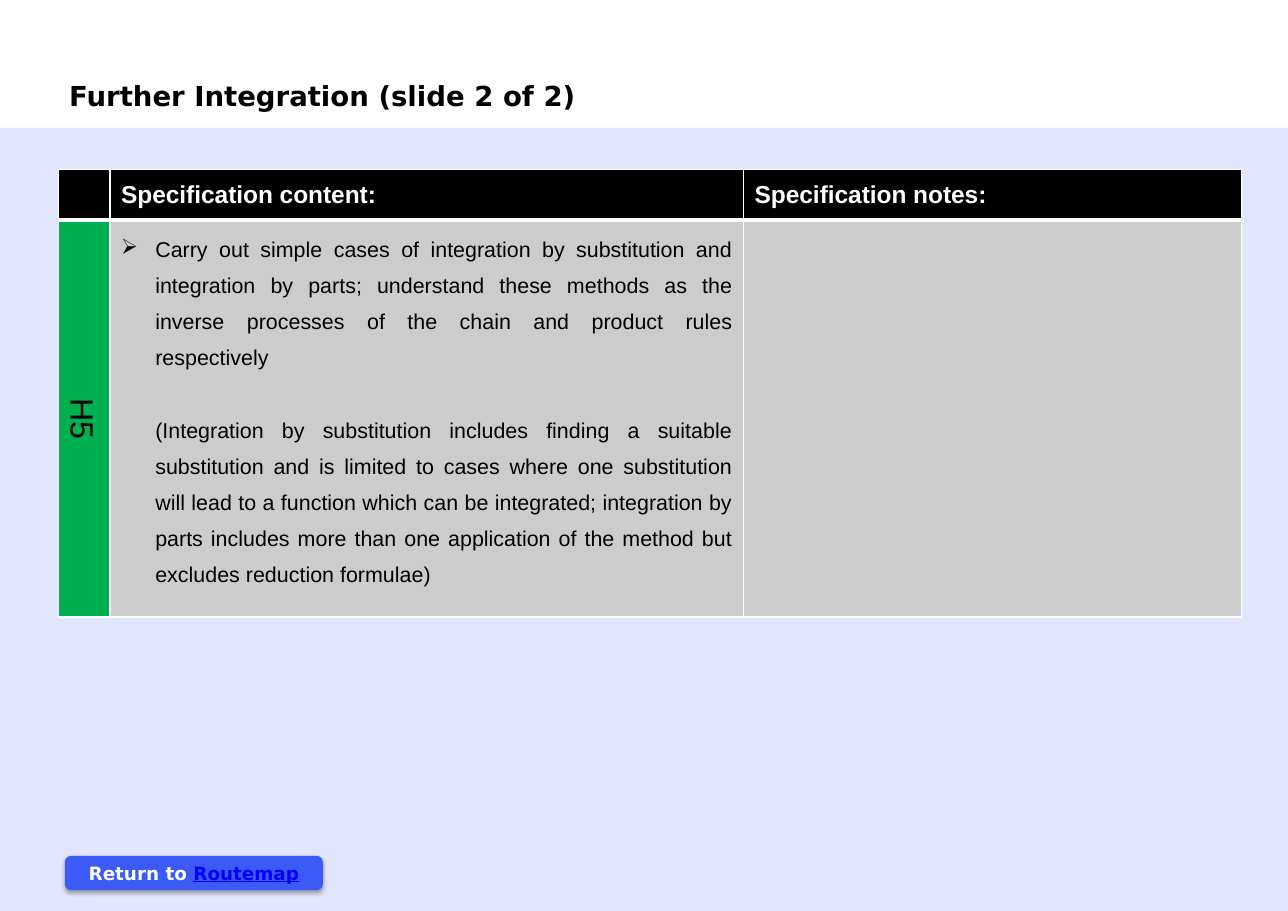
"""Build the Further Integration specification slide."""
from lxml.etree import SubElement
from pptx import Presentation
from pptx.dml.color import RGBColor
from pptx.enum.shapes import MSO_SHAPE
from pptx.enum.text import MSO_ANCHOR, MSO_AUTO_SIZE, PP_ALIGN
from pptx.oxml import parse_xml
from pptx.oxml.ns import nsdecls, qn
from pptx.util import Inches, Pt


def paint(fill, color):
    fill.solid()
    fill.fore_color.rgb = RGBColor.from_string(color)


def style(paragraph, name, size, color, bold):
    font = paragraph.font
    font.name, font.size, font.bold = name, Pt(size), bold
    paint(font.fill, color)


prs = Presentation()
prs.slide_width, prs.slide_height = Inches(11.69), Inches(8.27)
slide = prs.slides.add_slide(prs.slide_layouts[6])

backdrop = slide.shapes.add_shape(
    MSO_SHAPE.RECTANGLE, 0, Inches(1.16), Inches(11.69), Inches(7.11))
backdrop.shadow.inherit = False
backdrop.line.fill.background()
paint(backdrop.fill, "3B5AF7")
tint = backdrop.fill._xPr.find(qn("a:solidFill"))[0]
SubElement(tint, qn("a:alpha"), val="15000")

return_button = slide.shapes.add_shape(
    MSO_SHAPE.ROUNDED_RECTANGLE, Inches(0.59), Inches(7.77), Inches(2.34), Inches(0.31))
return_button.shadow.inherit = False
return_button.line.fill.background()
paint(return_button.fill, "3B5AF7")
return_button._element.spPr.find(qn("a:effectLst")).append(parse_xml(
    f'<a:outerShdw {nsdecls("a")} blurRad="{Pt(3.1)}" dist="{Pt(1.8)}" dir="5400000" '
    'rotWithShape="0"><a:srgbClr val="000000"><a:alpha val="35000"/></a:srgbClr></a:outerShdw>'))
return_button.text_frame.vertical_anchor = MSO_ANCHOR.MIDDLE
return_label = return_button.text_frame.paragraphs[0]
return_label.alignment = PP_ALIGN.CENTER
style(return_label, "DejaVu Sans", 12, "FFFFFF", True)
return_label.add_run().text = "Return to "
routemap = return_label.add_run()
routemap.text = "Routemap"
routemap.font.underline = True
paint(routemap.font.fill, "0000FF")

specification = slide.shapes.add_table(
    2, 3, Inches(0.53), Inches(1.54), Inches(10.74), Inches(4.06)).table
for column, width in zip(specification.columns, (0.47, 5.75, 4.52)):
    column.width = Inches(width)
for row, height in zip(specification.rows, (0.46, 3.6)):
    row.height = Inches(height)

cell_colors = (("000000", "000000", "000000"), ("00B050", "CCCCCC", "CCCCCC"))
border_widths = ({"L": 1, "R": 1, "T": 1, "B": 3}, {"L": 1, "R": 1, "T": 3, "B": 1})
for row, colors, borders in zip(specification.rows, cell_colors, border_widths):
    for cell, color in zip(row.cells, colors):
        for side, width in borders.items():
            cell._tc.get_or_add_tcPr().append(parse_xml(
                f'<a:ln{side} {nsdecls("a")} w="{Pt(width)}"><a:solidFill>'
                f'<a:srgbClr val="FFFFFF"/></a:solidFill></a:ln{side}>'))
        paint(cell.fill, color)

for index, heading in enumerate(("Specification content:", "Specification notes:"), 1):
    cell = specification.cell(0, index)
    cell.text = heading
    cell.vertical_anchor = MSO_ANCHOR.MIDDLE
    style(cell.text_frame.paragraphs[0], "Arial", 16, "FFFFFF", True)

unit = specification.cell(1, 0)
unit.text = "H5"
unit._tc.tcPr.set("vert", "vert")
unit.text_frame.paragraphs[0].alignment = PP_ALIGN.CENTER
style(unit.text_frame.paragraphs[0], "Arial", 21, "000000", False)

content = specification.cell(1, 1).text_frame
content.text = (
    "Carry out simple cases of integration by substitution and integration by parts; "
    "understand these methods as the inverse processes of the chain and product rules "
    "respectively\n"
    "(Integration by substitution includes finding a suitable substitution and is limited "
    "to cases where one substitution will lead to a function which can be integrated; "
    "integration by parts includes more than one application of the method but excludes "
    "reduction formulae)")
requirement, clarification = content.paragraphs
for paragraph, indent in ((requirement, -0.31), (clarification, 0)):
    properties = paragraph._p.get_or_add_pPr()
    properties.set("marL", str(Inches(0.31)))
    properties.set("indent", str(Inches(indent)))
    if indent:
        SubElement(properties, qn("a:buChar"), char="➢")
    paragraph.alignment = PP_ALIGN.JUSTIFY
    paragraph.line_spacing = 1.5
    style(paragraph, "Arial", 14, "000000", False)
clarification.space_before = Pt(24)

title = slide.shapes.add_textbox(
    Inches(0.53), Inches(0.67), Inches(4.9), Inches(0.4)).text_frame
title.word_wrap = False
title.auto_size = MSO_AUTO_SIZE.SHAPE_TO_FIT_TEXT
title.text = "Further Integration (slide 2 of 2)"
style(title.paragraphs[0], "DejaVu Sans", 18, "000000", True)

prs.save("out.pptx")
